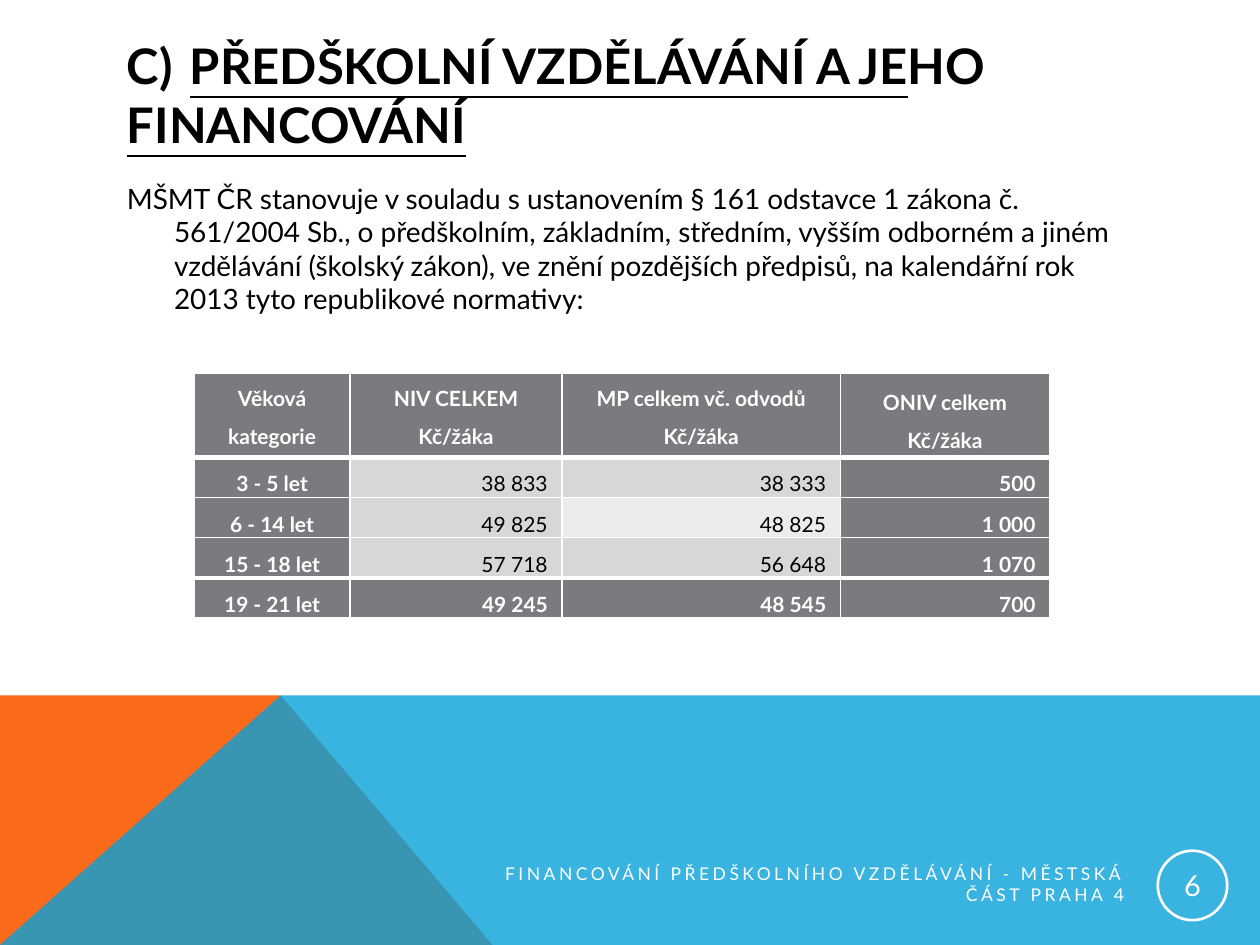
from dataclasses import dataclass

from lxml.etree import SubElement
from pptx import Presentation
from pptx.dml.color import RGBColor as RGB
from pptx.enum.shapes import MSO_SHAPE as Shape
from pptx.enum.text import MSO_ANCHOR as Anchor, PP_ALIGN as Align
from pptx.oxml.ns import qn
from pptx.util import Cm, Pt


@dataclass(frozen=True)
class Theme:
    font: str = "Lato"
    black: RGB = RGB(0, 0, 0)
    white: RGB = RGB(255, 255, 255)
    orange: RGB = RGB(0xF9, 0x6A, 0x1B)
    blue: RGB = RGB(0x08, 0xA1, 0xD9)
    dark: RGB = RGB(0x79, 0x7B, 0x7E)
    light: RGB = RGB(0xD7, 0xD7, 0xD8)
    pale: RGB = RGB(0xEC, 0xEC, 0xEC)
    title: float = 28
    body: float = 16
    number: float = 16.5
    table: float = 12
    footer: float = 10


T = Theme()


def style(p, size, color, bold=False, align=Align.LEFT):
    p.alignment = align
    for r in p.runs:
        r.font.name, r.font.size, r.font.bold = T.font, Pt(size), bold
        r.font.color.rgb = color


def set_borders(cell, widths):
    """Draw white borders; widths are points for left, right, top, bottom."""
    tcPr = cell._tc.get_or_add_tcPr()
    for side, width in zip("LRTB", widths):
        ln = SubElement(tcPr, qn(f"a:ln{side}"), w=str(Pt(width)))
        fill = SubElement(ln, qn("a:solidFill"))
        SubElement(fill, qn("a:srgbClr"), val=str(T.white))


prs = Presentation()
prs.slide_width, prs.slide_height = Cm(25.4), Cm(19.05)
s = prs.slides.add_slide(prs.slide_layouts[6])

# Bottom band: orange triangle under a translucent blue area
top, peak, bottom, right = 14.02, 5.66, 19.05, 25.4
bands = [
    (T.orange, [(0, bottom), (0, top), (peak, top), (9.93, bottom)]),
    (T.blue, [(0, bottom), (peak, top), (right, top), (right, bottom)]),
]
for color, points in bands:
    start, *rest = [(Cm(x), Cm(y)) for x, y in points]
    builder = s.shapes.build_freeform(*start)
    builder.add_line_segments(rest)
    sp = builder.convert_to_shape()
    sp.shadow.inherit = False
    sp.fill.solid()
    sp.fill.fore_color.rgb = color
    sp.line.fill.background()
blue_color = sp._element.spPr.find(qn("a:solidFill"))[0]
SubElement(blue_color, qn("a:alpha"), val="80000")

# Title
tf = s.shapes.add_textbox(Cm(2.31), Cm(1.73), Cm(20.88), Cm(1.52)).text_frame
tf.word_wrap = True
tf.vertical_anchor = Anchor.BOTTOM
tf.margin_bottom = Cm(0.16)
p = tf.paragraphs[0]
for text, underline in [
    ("C)\t", False),
    ("PŘEDŠKOLNÍ VZDĚLÁVÁNÍ A JE", True),
    ("HO ", False),
    ("FINANCOVÁNÍ", True),
]:
    r = p.add_run()
    r.text = text
    r.font.underline = underline
style(p, T.title, T.black, bold=True)

# Body
tf = s.shapes.add_textbox(Cm(2.31), Cm(3.53), Cm(20.88), Cm(9.93)).text_frame
tf.word_wrap = True
p = tf.paragraphs[0]
p.text = (
    "MŠMT ČR stanovuje v souladu s ustanovením § 161 odstavce 1 zákona č. "
    "561/2004 Sb., o předškolním, základním, středním, vyšším odborném a jiném "
    "vzdělávání (školský zákon), ve znění pozdějších předpisů, na kalendářní rok "
    "2013 tyto republikové normativy:"
)
style(p, T.body, T.black)
pPr = p._p.get_or_add_pPr()
pPr.set("marL", str(Cm(0.95)))
pPr.set("indent", str(-Cm(0.95)))

# Footer and slide number
tf = s.shapes.add_textbox(Cm(9.78), Cm(17.45), Cm(13.13), Cm(0.76)).text_frame
tf.word_wrap = True
tf.vertical_anchor = Anchor.MIDDLE
p = tf.paragraphs[0]
p.text = "FINANCOVÁNÍ PŘEDŠKOLNÍHO VZDĚLÁVÁNÍ - MĚSTSKÁ ČÁST PRAHA 4"
style(p, T.footer, T.white, align=Align.RIGHT)
p.runs[0]._r.get_or_add_rPr().set("spc", "200")

sp = s.shapes.add_shape(Shape.OVAL, Cm(23.34), Cm(17.15), Cm(1.4), Cm(1.4))
sp.shadow.inherit = False
sp.fill.background()
sp.line.color.rgb = T.white
sp.line.width = Pt(1.5)
tf = sp.text_frame
tf.margin_left = tf.margin_right = tf.margin_top = tf.margin_bottom = Cm(0.03)
tf.vertical_anchor = Anchor.MIDDLE
tf.text = "6"
style(tf.paragraphs[0], T.number, T.white, align=Align.CENTER)

# Table of norms per age group
rows = [
    ["Věková kategorie", "NIV CELKEM\vKč/žáka", "MP celkem vč. odvodů Kč/žáka",
     "ONIV celkem\vKč/žáka"],
    ["3 - 5 let", "38 833 ", "38 333 ", "500 "],
    ["6 - 14 let", "49 825 ", "48 825 ", "1 000 "],
    ["15 - 18 let", "57 718 ", "56 648 ", "1 070 "],
    ["19 - 21 let", "49 245 ", "48 545 ", "700 "],
]
col_widths = [3.15, 4.27, 5.61, 4.22]
row_heights = [1.7] + [0.81] * 4
last_row, last_col = len(rows) - 1, len(col_widths) - 1
table = s.shapes.add_table(
    len(rows), len(col_widths), Cm(3.91), Cm(7.52),
    Cm(sum(col_widths)), Cm(sum(row_heights)),
).table
for column, width in zip(table.columns, col_widths):
    column.width = Cm(width)
for row, height in zip(table.rows, row_heights):
    row.height = Cm(height)

for i, values in enumerate(rows):
    for j, value in enumerate(values):
        cell = table.cell(i, j)
        inner = 0 < i < last_row and 0 < j < last_col
        fill = T.dark if not inner else T.pale if (i, j) == (2, 2) else T.light
        set_borders(cell, (1, 1, 3 if i in (1, last_row) else 1,
                           3 if i in (0, last_row - 1) else 1))
        cell.fill.solid()
        cell.fill.fore_color.rgb = fill
        cell.margin_left = cell.margin_right = Cm(0.18)
        cell.margin_top = cell.margin_bottom = 0
        top_aligned = i == 0 and j < last_col
        cell.vertical_anchor = Anchor.TOP if top_aligned else Anchor.MIDDLE
        p = cell.text_frame.paragraphs[0]
        p.text = value
        p.line_spacing = 1.5
        if top_aligned:
            p.space_after = Pt(10)
        style(p, T.table, T.black if inner else T.white, bold=not inner,
              align=Align.CENTER if i == 0 or j == 0 else Align.RIGHT)

prs.save("out.pptx")
